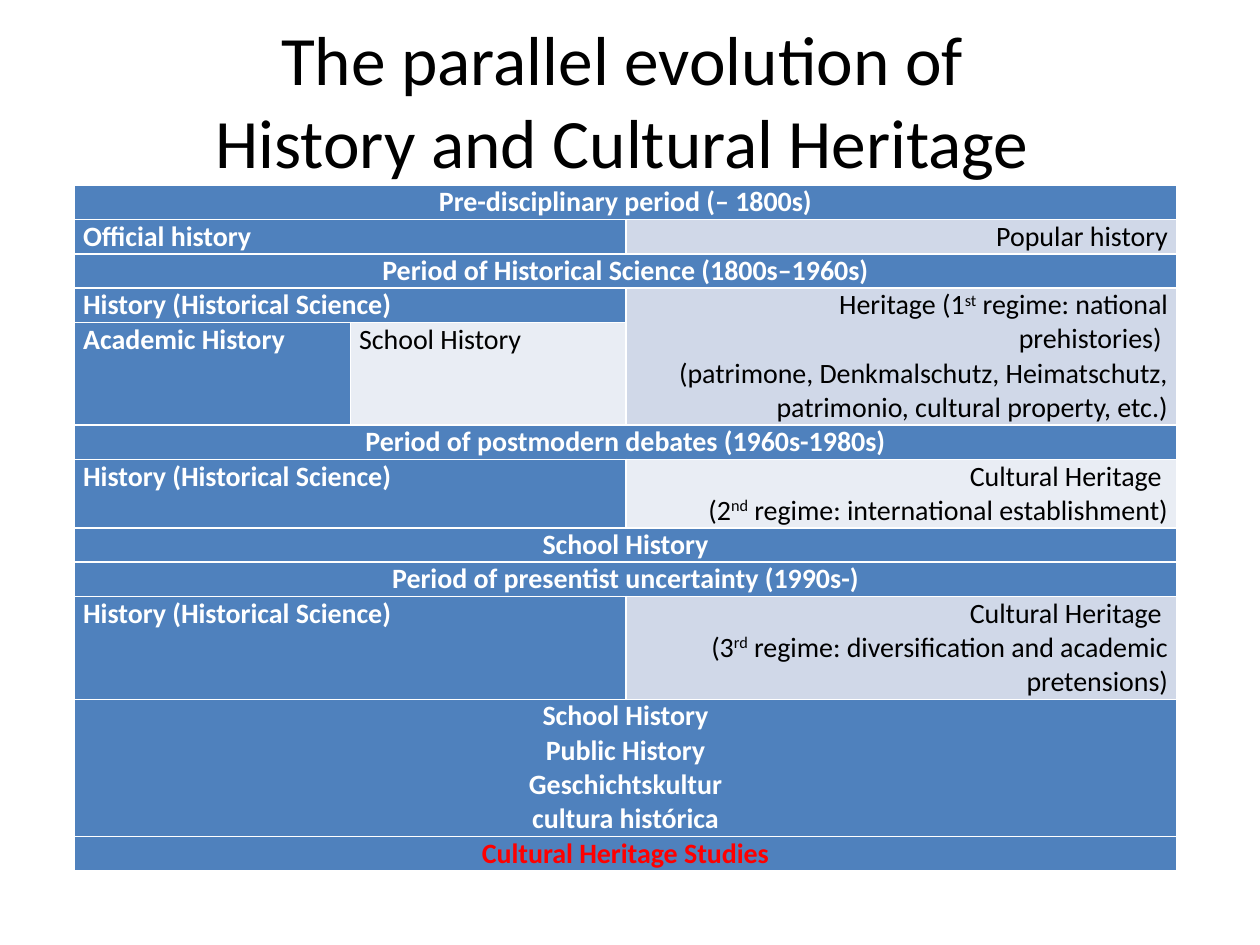
from pptx import Presentation
from pptx.dml.color import RGBColor
from pptx.enum.text import MSO_ANCHOR, MSO_AUTO_SIZE, PP_ALIGN
from pptx.util import Inches, Pt

COLORS = {"blue": "4F81BD", "mid": "D0D8E8", "pale": "E9EDF4",
          "white": "FFFFFF", "black": "000000", "red": "FF0000"}
FONT = "Calibri"
LINE = 0.272
COLS = [2.19, 2.19, 4.37]
ROWS = [1, 1, 1, 1, 3, 1, 2, 1, 1, 3, 4, 1]
BANDS = {
    0: "Pre-disciplinary period (– 1800s)",
    2: "Period of Historical Science (1800s–1960s)",
    5: "Period of postmodern debates (1960s-1980s)",
    7: "School History",
    8: "Period of presentist uncertainty (1990s-)",
    10: "School History\nPublic History\nGeschichtskultur\ncultura histórica",
    11: "Cultural Heritage Studies",
}
SCIENCE = "History (Historical Science)"
PAIRS = {
    1: ("Official history", "Popular history", "mid"),
    3: (SCIENCE, "Heritage (1^st^ regime: national prehistories) \n"
        "(patrimone, Denkmalschutz, Heimatschutz, patrimonio, cultural property, etc.)",
        "mid"),
    6: (SCIENCE, "Cultural Heritage \n(2^nd^ regime: international establishment)", "pale"),
    9: (SCIENCE, "Cultural Heritage \n(3^rd^ regime: diversification and academic pretensions)",
        "mid"),
}


def style(font, size, color, bold=False):
    font.name = FONT
    font.size = Pt(size)
    font.bold = bold
    font.color.rgb = RGBColor.from_string(COLORS[color])


def add_title(slide):
    title = slide.shapes.title
    title.left, title.top, title.width, title.height = map(Inches, (0.5, 0.3, 9, 2.27))
    frame = title.text_frame
    frame.text = "The parallel evolution of \vHistory and Cultural Heritage "
    frame.auto_size = MSO_AUTO_SIZE.NONE
    frame.vertical_anchor = MSO_ANCHOR.MIDDLE
    frame.margin_bottom = Inches(1.34)
    para = frame.paragraphs[0]
    para.alignment = PP_ALIGN.CENTER
    style(para.font, 39.6, "black")


def add_runs(para, text):
    for index, part in enumerate(text.split("^")):
        run = para.add_run()
        run.text = part
        if index % 2:
            run.font._element.set("baseline", "30000")


def fill_cell(cell, text, align, fill="blue", color="white"):
    cell.fill.solid()
    cell.fill.fore_color.rgb = RGBColor.from_string(COLORS[fill])
    cell.margin_left = cell.margin_right = Inches(0.07)
    cell.margin_top = cell.margin_bottom = 0
    frame = cell.text_frame
    for index, line in enumerate(text.split("\n")):
        para = frame.add_paragraph() if index else frame.paragraphs[0]
        para.alignment = align
        style(para.font, 16, color, fill == "blue")
        add_runs(para, line)


def add_table(slide):
    table = slide.shapes.add_table(
        len(ROWS), len(COLS), Inches(0.59), Inches(1.47),
        Inches(sum(COLS)), Inches(LINE * sum(ROWS))).table
    for col, width in zip(table.columns, COLS):
        col.width = Inches(width)
    for row, lines in zip(table.rows, ROWS):
        row.height = Inches(LINE * lines)
    return table


def fill_table(table):
    last = len(ROWS) - 1
    for row, text in BANDS.items():
        table.cell(row, 0).merge(table.cell(row, 2))
        fill_cell(table.cell(row, 0), text, PP_ALIGN.CENTER,
                  color="red" if row == last else "white")
    for row, (left, right, fill) in PAIRS.items():
        table.cell(row, 0).merge(table.cell(row, 1))
        fill_cell(table.cell(row, 0), left, PP_ALIGN.LEFT)
        fill_cell(table.cell(row, 2), right, PP_ALIGN.RIGHT, fill, "black")
    table.cell(3, 2).merge(table.cell(4, 2))
    indent = table.cell(3, 2).text_frame.paragraphs[0]
    indent._p.get_or_add_pPr().set("marL", str(Inches(0.5)))
    fill_cell(table.cell(4, 0), "Academic History", PP_ALIGN.LEFT)
    fill_cell(table.cell(4, 1), "School History", PP_ALIGN.LEFT, "pale", "black")


def main():
    deck = Presentation()
    deck.slide_width, deck.slide_height = Inches(10), Inches(7.5)
    slide = deck.slides.add_slide(deck.slide_layouts[5])
    add_title(slide)
    fill_table(add_table(slide))
    deck.save("out.pptx")


if __name__ == "__main__":
    main()
